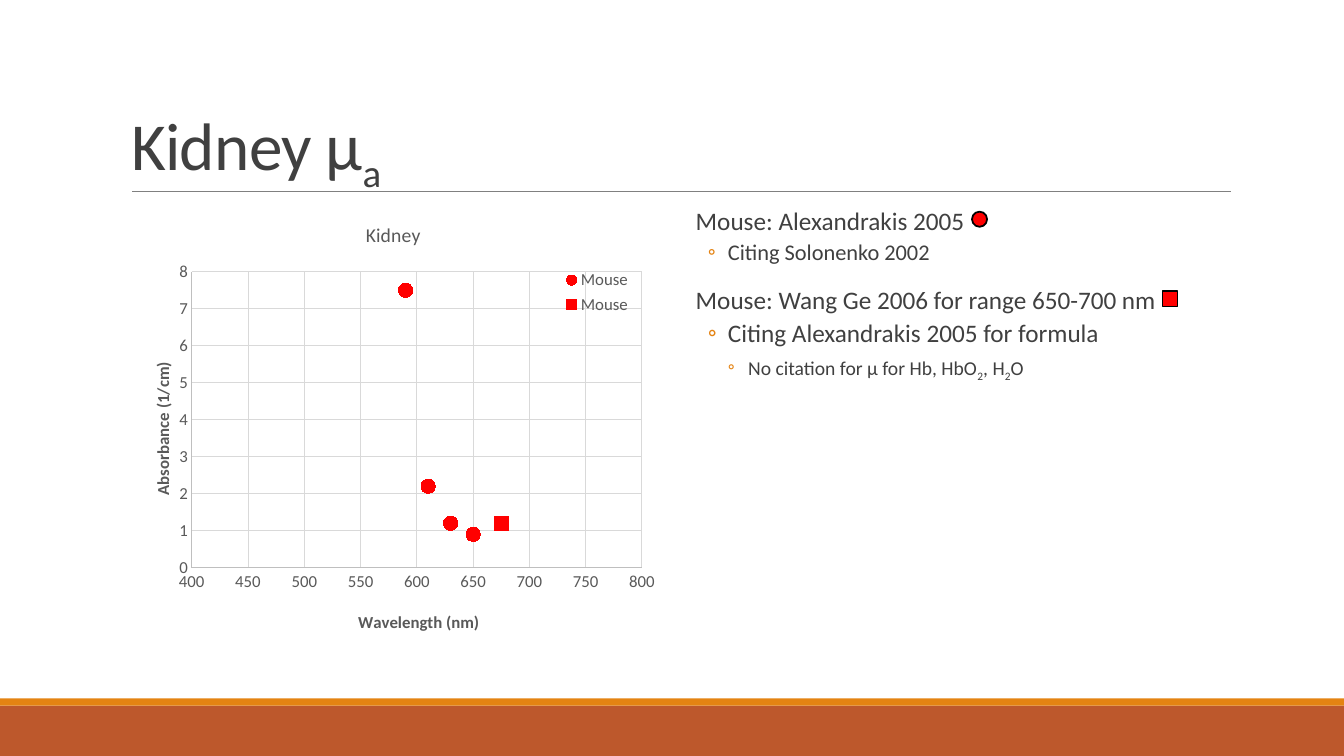
import pptx
import pptx.chart.data
import pptx.dml.color
import pptx.enum.chart
import pptx.enum.shapes
import pptx.enum.text
import pptx.oxml
import pptx.oxml.ns
import pptx.util
from pptx.util import Inches, Pt

FONT = "Calibri"
DARK, GREY, GRID, AXIS = "404040", "595959", "D9D9D9", "BFBFBF"
RED, ORANGE, RUST, BLACK = "FF0000", "E48312", "BD582C", "000000"

# Content: a run is (text, is subscript)
TITLE = [("Kidney μ", False), ("a", True)]
NOTES = [  # level, size, runs
    (0, 18, [("Mouse: Alexandrakis 2005", False)]),
    (1, 16, [("Citing Solonenko 2002", False)]),
    (0, 18, [("Mouse: Wang Ge 2006 for range 650-700 nm", False)]),
    (1, 18, [("Citing Alexandrakis 2005 for formula", False)]),
    (2, 14, [("No citation for μ for Hb, HbO", False), ("2", True),
             (", H", False), ("2", True), ("O", False)]),
]
LEVELS = [  # indent, hanging, space before, space after, bullet
    (0.1, 0.1, 12, 2, " "),
    (0.42, 0.2, 2, 4, "◦"),
    (0.62, 0.2, 2, 4, "◦"),
]
MARKER = pptx.enum.chart.XL_MARKER_STYLE
SHAPE = pptx.enum.shapes.MSO_SHAPE
SERIES = [  # name, points, marker
    ("Mouse", [(590, 7.5), (610, 2.2), (630, 1.2), (650, 0.9)], MARKER.CIRCLE),
    ("Mouse", [(675, 1.2)], MARKER.SQUARE),
]
KEYS = [(SHAPE.OVAL, 9.64, 2.1), (SHAPE.RECTANGLE, 11.53, 2.89)]
BARS = [(7, 0.5, RUST), (6.93, 0.07, ORANGE)]  # top, height, colour
WIDTH, HEIGHT = 13.33, 7.5
CONTENT_TOP, CONTENT_WIDTH, CONTENT_HEIGHT = 2.02, 5.4, 4.4


def rgb(color):
    return pptx.dml.color.RGBColor.from_string(color)


def style_font(font, size, color, bold=False):
    font.name, font.size, font.bold = FONT, Pt(size), bold
    font.color.rgb = rgb(color)


def style_line(line, color, width):
    line.color.rgb = rgb(color)
    line.width = Pt(width)


def add_runs(paragraph, runs, size):
    for text, subscript in runs:
        run = paragraph.add_run()
        run.text = text
        style_font(run.font, size, DARK)
        if subscript:
            run.font._element.set("baseline", "-25000")


def add_block(kind, left, top, width, height, color):
    shape = slide.shapes.add_shape(
        kind, Inches(left), Inches(top), Inches(width), Inches(height))
    shape.shadow.inherit = False
    shape.fill.solid()
    shape.fill.fore_color.rgb = rgb(color)
    shape.line.fill.background()
    return shape


def move(shape, left, top, width, height):
    shape.left, shape.top = Inches(left), Inches(top)
    shape.width, shape.height = Inches(width), Inches(height)


def set_layout(parent, index, inner=False, **box):
    """Place a chart part by fractions of the chart."""
    for old in parent.findall(pptx.oxml.ns.qn("c:layout")):
        parent.remove(old)
    target = '<c:layoutTarget val="inner"/>' if inner else ""
    modes = "".join(f'<c:{side}Mode val="edge"/>' for side in "xy")
    sizes = "".join(f'<c:{side} val="{value}"/>' for side, value in box.items())
    parent.insert(index, pptx.oxml.parse_xml(
        f'<c:layout {pptx.oxml.ns.nsdecls("c")}><c:manualLayout>'
        f'{target}{modes}{sizes}</c:manualLayout></c:layout>'))


def set_title(owner, text, size, bold):
    frame = owner.text_frame
    frame.text = text
    style_font(frame.paragraphs[0].runs[0].font, size, GREY, bold)


presentation = pptx.Presentation()
presentation.slide_width, presentation.slide_height = Inches(WIDTH), Inches(HEIGHT)
slide = presentation.slides.add_slide(presentation.slide_layouts[1])
title, body = slide.placeholders

# Bottom bars and title rule
for top, height, color in BARS:
    add_block(SHAPE.RECTANGLE, 0, top, WIDTH, height, color)
rule = slide.shapes.add_connector(
    pptx.enum.shapes.MSO_CONNECTOR.STRAIGHT,
    Inches(1.31), Inches(1.9), Inches(12.21), Inches(1.9))
style_line(rule.line, "808080", 0.5)
rule._element.spPr.append(
    pptx.oxml.parse_xml(f'<a:effectLst {pptx.oxml.ns.nsdecls("a")}/>'))

# Title
move(title, 1.2, 0.31, 11, 1.59)
frame = title.text_frame
frame.auto_size = pptx.enum.text.MSO_AUTO_SIZE.NONE
frame.vertical_anchor = pptx.enum.text.MSO_ANCHOR.BOTTOM
paragraph = frame.paragraphs[0]
paragraph.alignment = pptx.enum.text.PP_ALIGN.LEFT
paragraph.line_spacing = 0.85
add_runs(paragraph, TITLE, 48)
for run in paragraph.runs:
    run.font._element.set("spc", "-50")

# Source notes
move(body, 6.8, CONTENT_TOP, CONTENT_WIDTH, CONTENT_HEIGHT)
frame = body.text_frame
frame.auto_size = pptx.enum.text.MSO_AUTO_SIZE.NONE
frame.margin_left = frame.margin_right = 0
for number, (level, size, runs) in enumerate(NOTES):
    paragraph = frame.add_paragraph() if number else frame.paragraphs[0]
    indent, hanging, before, after, bullet = LEVELS[level]
    paragraph.level = level
    paragraph.line_spacing = 0.9
    paragraph.space_before, paragraph.space_after = Pt(before), Pt(after)
    properties = paragraph._element.get_or_add_pPr()
    properties.set("marL", str(Inches(indent)))
    properties.set("indent", str(-Inches(hanging)))
    for tag, inside in (("buClr", f'><a:srgbClr val="{ORANGE}"/></a:buClr>'),
                        ("buFont", f' typeface="{FONT}"/>'),
                        ("buChar", f' char="{bullet}"/>')):
        properties.append(pptx.oxml.parse_xml(
            f'<a:{tag} {pptx.oxml.ns.nsdecls("a")}{inside}'))
    add_runs(paragraph, runs, size)

# Marker keys beside the notes
for kind, left, top in KEYS:
    style_line(add_block(kind, left, top, 0.15, 0.15, RED).line, BLACK, 1.25)

# Scatter chart
data = pptx.chart.data.XyChartData()
for name, points, marker in SERIES:
    series = data.add_series(name)
    for x, y in points:
        series.add_data_point(x, y)
chart = slide.shapes.add_chart(
    pptx.enum.chart.XL_CHART_TYPE.XY_SCATTER, Inches(1.2), Inches(CONTENT_TOP),
    Inches(CONTENT_WIDTH), Inches(CONTENT_HEIGHT), data).chart
style_font(chart.font, 10, BLACK)
set_title(chart.chart_title, "Kidney", 14, False)
chart.plots[0].vary_by_categories = False
set_layout(chart._chartSpace.chart.plotArea, 0, True, x=0.13, y=0.154, w=0.827, h=0.667)

for series, (name, points, marker) in zip(chart.plots[0].series, SERIES):
    series.smooth = False
    series.format.line.fill.background()
    series.marker.style, series.marker.size = marker, 10
    series.marker.format.fill.solid()
    series.marker.format.fill.fore_color.rgb = rgb(RED)
    series.marker.format.line.color.rgb = rgb(RED)

for axis, text, low, high, step, x, y in (
        (chart.category_axis, "Wavelength (nm)", 400, 800, 50, 0.43, 0.91),
        (chart.value_axis, "Absorbance (1/cm)", 0, 8, 1, 0.05, 0.35)):
    axis.minimum_scale, axis.maximum_scale, axis.major_unit = low, high, step
    axis.major_tick_mark = axis.minor_tick_mark = pptx.enum.chart.XL_TICK_MARK.NONE
    axis.has_major_gridlines = True
    style_line(axis.major_gridlines.format.line, GRID, 0.75)
    style_line(axis.format.line, AXIS, 0.75)
    style_font(axis.tick_labels.font, 12, GREY)
    set_title(axis.axis_title, text, 12, True)
    set_layout(axis.axis_title._element, 1, x=x, y=y)

# Legend over the plot's top right corner
chart.has_legend = True
legend = chart.legend
legend.position = pptx.enum.chart.XL_LEGEND_POSITION.CORNER
legend.include_in_layout = True
style_font(legend.font, 12, GREY)
set_layout(legend._element, 1, x=0.8, y=0.14, w=0.15, h=0.12)

presentation.save("out.pptx")
